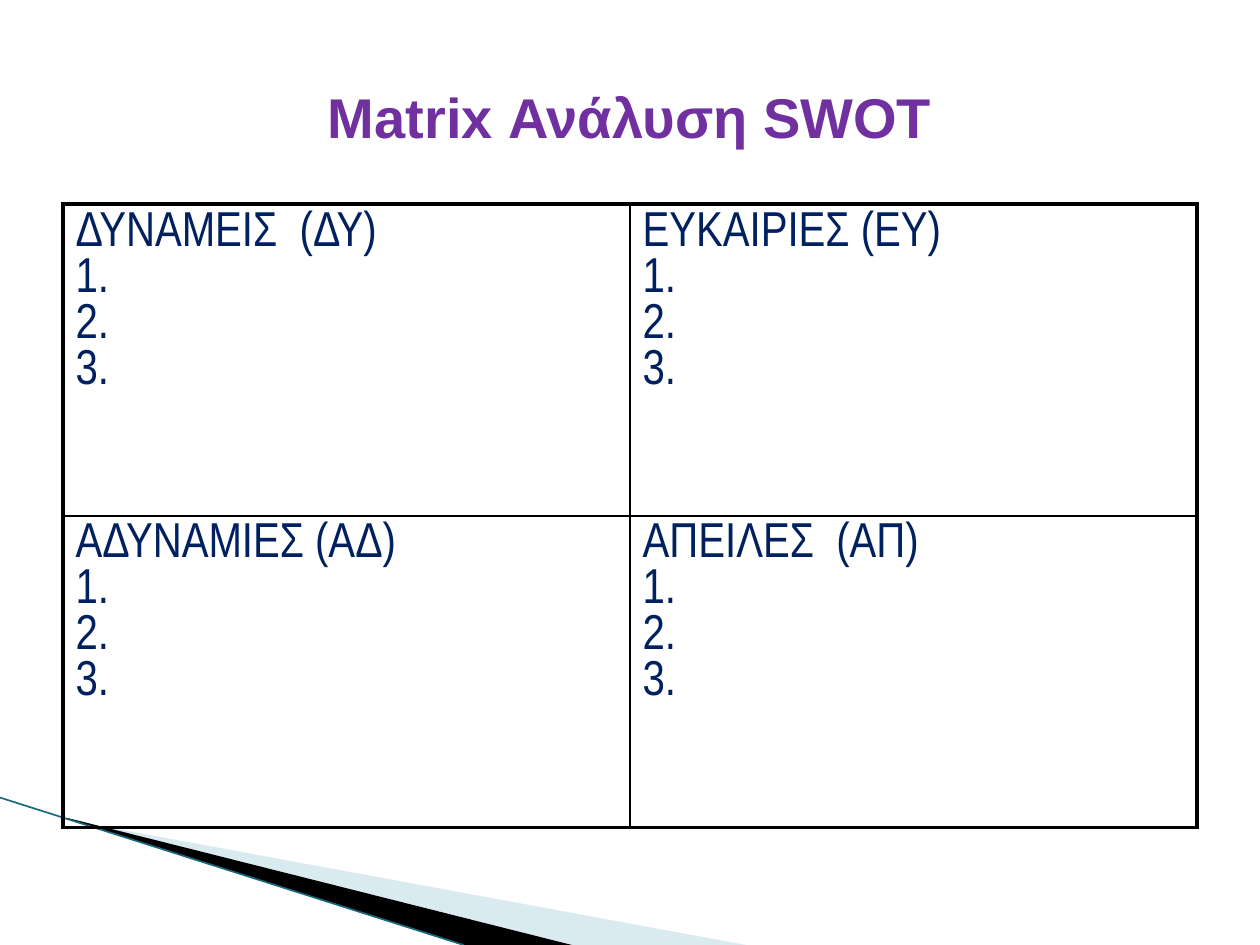
import pptx
import pptx.util
import pptx.dml.color
import pptx.enum.shapes
import pptx.enum.text
import pptx.oxml
import pptx.oxml.ns
from lxml import etree

Inches = pptx.util.Inches
Pt = pptx.util.Pt
qn = pptx.oxml.ns.qn
COLORS = {
    "title": "7030A0",
    "text": "002060",
    "border": "000000",
    "dark_wedge": "000000",
    "pale_wedge": "A0CBDC",
    "edge": "17697F",
}


def rgb(name):
    return pptx.dml.color.RGBColor.from_string(COLORS[name])


def add_run(paragraph, text, size, font_name, color):
    run = paragraph.add_run()
    run.text = text
    run.font.size = Pt(size)
    run.font.name = font_name
    run.font.color.rgb = rgb(color)
    return run


presentation = pptx.Presentation()
presentation.slide_width = Inches(10)
presentation.slide_height = Inches(7.5)
slide = presentation.slides.add_slide(presentation.slide_layouts[6])

wedges = [
    ("pale_wedge", 40, [(0.55, 6.51), (5.92, 7.5), (4.55, 7.5), (0.55, 6.5)]),
    ("dark_wedge", 100, [(0.53, 6.49), (4.54, 7.5), (3.67, 7.5), (0.54, 6.5)]),
]
for color, opacity, points in wedges:
    corners = [(Inches(x), Inches(y)) for x, y in points]
    builder = slide.shapes.build_freeform(*corners[0])
    builder.add_line_segments(corners[1:], close=True)
    wedge = builder.convert_to_shape()
    wedge.shadow.inherit = False
    wedge.fill.solid()
    wedge.fill.fore_color.rgb = rgb(color)
    wedge.line.fill.background()
    if opacity < 100:
        fill_color = wedge._element.spPr.find(qn("a:solidFill"))[0]
        etree.SubElement(fill_color, qn("a:alpha"), val=str(opacity * 1000))

edge = slide.shapes.add_connector(
    pptx.enum.shapes.MSO_CONNECTOR.STRAIGHT,
    Inches(0), Inches(6.33), Inches(3.68), Inches(7.5),
)
edge.line.color.rgb = rgb("edge")
edge.line.width = Pt(0.95)
etree.SubElement(edge._element.spPr, qn("a:effectLst"))

title = slide.shapes.add_textbox(Inches(0.5), Inches(0.3), Inches(9), Inches(1.25))
title.text_frame.word_wrap = True
title.text_frame.vertical_anchor = pptx.enum.text.MSO_ANCHOR.MIDDLE
paragraph = title.text_frame.paragraphs[0]
paragraph.alignment = pptx.enum.text.PP_ALIGN.CENTER
add_run(paragraph, "Matrix Ανάλυση SWOT", 32, "Arial", "title").font.bold = True

headings = [
    ["ΔΥΝΑΜΕΙΣ  (ΔΥ)", "ΕΥΚΑΙΡΙΕΣ (ΕΥ)"],
    ["ΑΔΥΝΑΜΙΕΣ (ΑΔ)", "ΑΠΕΙΛΕΣ  (ΑΠ)"],
]
table = slide.shapes.add_table(
    2, 2, Inches(0.5), Inches(1.62), Inches(9), Inches(4.95)
).table
table.first_row = False
table.horz_banding = False

for row, row_headings in enumerate(headings):
    for column, heading in enumerate(row_headings):
        cell = table.cell(row, column)
        for index, text in enumerate([heading, "1.", "2.", "3."]):
            frame = cell.text_frame
            paragraph = frame.add_paragraph() if index else frame.paragraphs[0]
            add_run(paragraph, text, 28, "Arial Narrow", "text")

        properties = cell._tc.get_or_add_tcPr()
        outer_sides = {"L": column == 0, "R": column == 1, "T": row == 0, "B": row == 1}
        for side, is_outer in outer_sides.items():
            width = Pt(2.25 if is_outer else 1)
            border = etree.SubElement(properties, qn(f"a:ln{side}"), w=str(int(width)))
            fill = etree.SubElement(border, qn("a:solidFill"))
            etree.SubElement(fill, qn("a:srgbClr"), val=COLORS["border"])
        cell.fill.background()

presentation.save("out.pptx")
